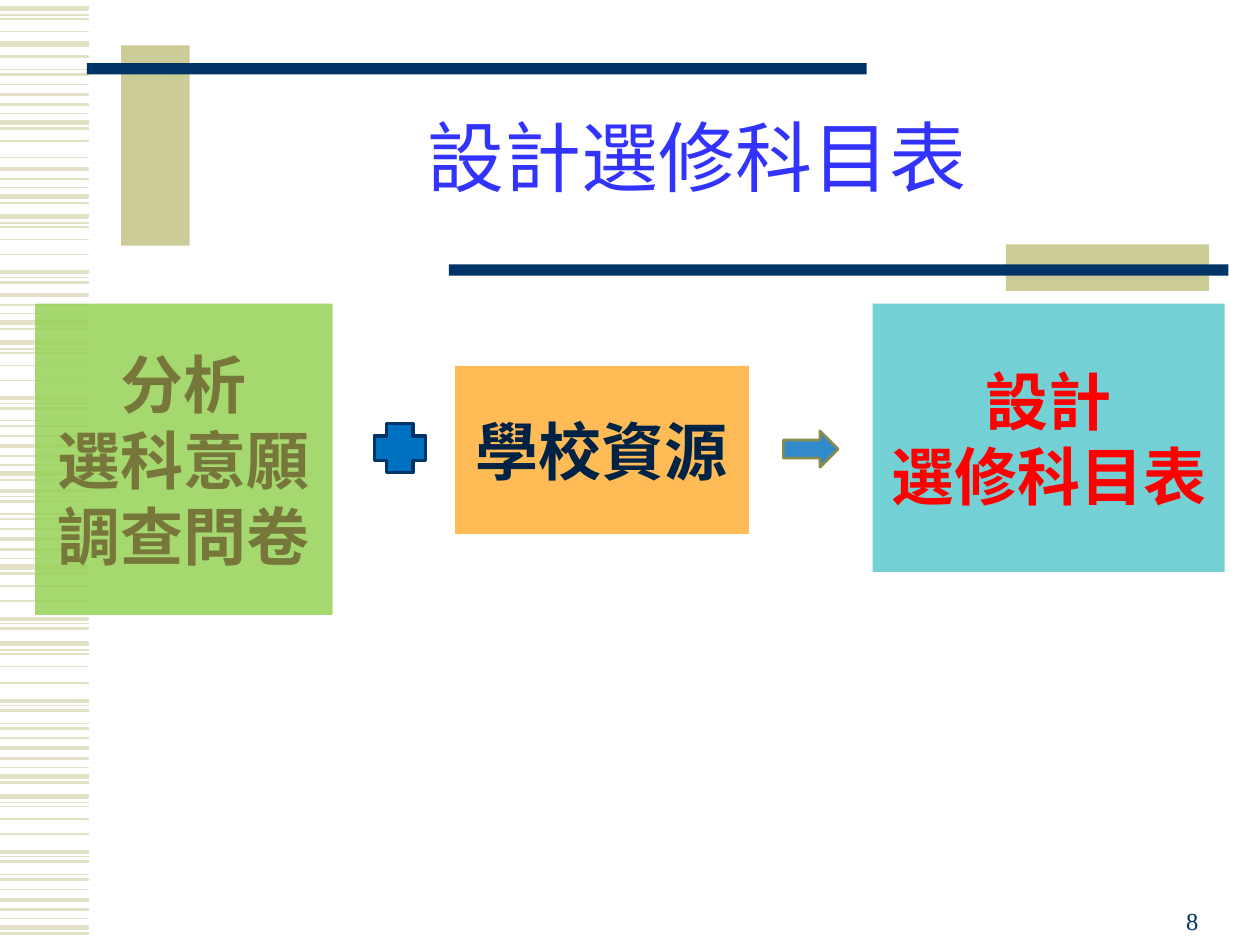
from pptx import Presentation
from pptx.dml.color import RGBColor
from pptx.enum.shapes import MSO_CONNECTOR, MSO_SHAPE
from pptx.enum.text import MSO_ANCHOR, PP_ALIGN
from pptx.oxml.ns import qn
from pptx.util import Inches, Pt
from lxml.etree import SubElement

SAND = RGBColor(0xCC, 0xCC, 0x99)
PALE = RGBColor(0xE3, 0xE2, 0xC7)
NAVY = RGBColor(0x00, 0x33, 0x66)
INDIGO = RGBColor(0x33, 0x33, 0xFF)
GREEN = RGBColor(0x92, 0xD0, 0x50)
OLIVE = RGBColor(0x77, 0x77, 0x3B)
AMBER = RGBColor(0xFF, 0xAC, 0x30)
DARK = RGBColor(0x00, 0x22, 0x45)
TEAL = RGBColor(0x53, 0xC7, 0xCD)
RED = RGBColor(0xFF, 0x00, 0x00)
BLUE = RGBColor(0x00, 0x70, 0xC0)
KHAKI = RGBColor(0x8A, 0x8A, 0x4C)
SERIF, SANS = "Times New Roman", "Noto Sans CJK TC"

HEAD = [(0, 3), (0.05, 0.75), (0.08, 1), (0.18, 1)]
TRIO = [(0, 2.25), (0.04, 0.75), (0.08, 1.5)]
PAIR = [(0, 0.75), (0.04, 1.5), (0.12, 1)]
TAIL = [(0, 2.25), (0.08, 1.5), (0.15, 0.75), (0.22, 3), (0.27, 1.5)]
THIN, MID, BOLD = [(0, 1)], [(0, 1.5)], [(0, 3)]
BANDS = [
    (HEAD, [0.07, 1.72, 2.72, 5.11, 6.32]),
    (TRIO, [2.16, 3.16, 3.9, 4.91, 5.56, 6.76]),
    (PAIR, [0.55, 3.34, 4.08, 5.74, 6.94]),
    (TAIL, [0.75, 1.34, 2.34, 3.54, 4.28, 5.94, 7.14]),
    (THIN, [1.12, 1.25, 2.02, 3.02, 4.65, 4.77, 5.42, 6.62]),
    (MID, [0.45]),
    (BOLD, [0.35]),
]


def place(box, part):
    """Turn shares of a box into a box in inches."""
    x, y, w, h = box
    a, b, c, d = part
    return x + a * w, y + b * h, c * w, d * h


def block(slide, box, fill, kind=MSO_SHAPE.RECTANGLE, edge=None, width=0, alpha=None):
    """Add one filled shape, with an outline or see-through fill if asked."""
    shape = slide.shapes.add_shape(kind, *map(Inches, box))
    shape.shadow.inherit = False
    shape.fill.solid()
    shape.fill.fore_color.rgb = fill
    if alpha:
        tint = shape.fill._xPr.find(qn("a:solidFill"))[0]
        SubElement(tint, qn("a:alpha")).set("val", str(alpha * 1000))
    if edge is None:
        shape.line.fill.background()
    else:
        shape.line.color.rgb = edge
        shape.line.width = Pt(width)
    return shape


def write(frame, lines, font, size, color, align, bold=False):
    """Fill a text frame with paragraphs in one style."""
    frame.text = "\n".join(lines)
    for para in frame.paragraphs:
        para.alignment = align
        para.font.name = font
        para.font.size = Pt(size)
        para.font.bold = bold
        para.font.color.rgb = color


def stripes(slide, box):
    """Rule the left margin with repeating bands of lines."""
    x, y, w, _ = box
    for band, starts in BANDS:
        for start in starts:
            for step, width in band:
                row = Inches(y + start + step)
                line = slide.shapes.add_connector(
                    MSO_CONNECTOR.STRAIGHT, Inches(x), row, Inches(x + w), row)
                line.line.color.rgb = PALE
                line.line.width = Pt(width)
                SubElement(line._element.spPr, qn("a:effectLst"))


def header(slide, box):
    """Place the title between its bars."""
    bars = [
        ((0.03, 0, 0.06, 0.815), SAND),
        ((0, 0.072, 0.683, 0.046), NAVY),
        ((0.805, 0.81, 0.178, 0.19), SAND),
        ((0.317, 0.892, 0.683, 0.046), NAVY),
    ]
    for part, fill in bars:
        block(slide, place(box, part), fill)
    title = slide.shapes.title
    title.left, title.top, title.width, title.height = map(
        Inches, place(box, (0.09, 0.16, 0.89, 0.64)))
    frame = title.text_frame
    frame.vertical_anchor = MSO_ANCHOR.MIDDLE
    write(frame, ["設計選修科目表"], SERIF, 44, INDIGO, PP_ALIGN.CENTER)
    frame.paragraphs[0].line_spacing = 0.85


def flow(slide, box):
    """Place the three cards with a plus and an arrow between them."""
    cards = [
        ((0, 0, 0.25, 1), GREEN, OLIVE, ["分析", "選科意願", "調查問卷"]),
        ((0.353, 0.2, 0.247, 0.54), AMBER, DARK, ["學校資源"]),
        ((0.704, 0, 0.296, 0.862), TEAL, RED, ["設計", "選修科目表"]),
    ]
    for part, fill, ink, lines in cards:
        frame = block(slide, place(box, part), fill, alpha=81).text_frame
        frame.word_wrap = False
        frame.vertical_anchor = MSO_ANCHOR.MIDDLE
        write(frame, lines, SANS, 36, ink, PP_ALIGN.CENTER, True)
    block(slide, place(box, (0.629, 0.409, 0.046, 0.117)), BLUE,
          MSO_SHAPE.RIGHT_ARROW, KHAKI, 1.5, 81)
    block(slide, place(box, (0.285, 0.385, 0.043, 0.158)), BLUE,
          MSO_SHAPE.CROSS, NAVY, 2)


def footer(slide, box):
    """Write the page number at the lower right."""
    frame = slide.shapes.add_textbox(*map(Inches, box)).text_frame
    frame.word_wrap = True
    frame.vertical_anchor = MSO_ANCHOR.BOTTOM
    write(frame, ["8"], SERIF, 14, NAVY, PP_ALIGN.RIGHT)


def main():
    """Build the slide and save it."""
    deck = Presentation()
    deck.slide_width, deck.slide_height = Inches(10), Inches(7.5)
    slide = deck.slides.add_slide(deck.slide_layouts[5])
    stripes(slide, (0, 0, 0.71, 7.5))
    header(slide, (0.69, 0.36, 9.06, 1.95))
    flow(slide, (0.28, 2.41, 9.44, 2.47))
    footer(slide, (7.21, 6.97, 2.4, 0.5))
    deck.save("out.pptx")


if __name__ == "__main__":
    main()
